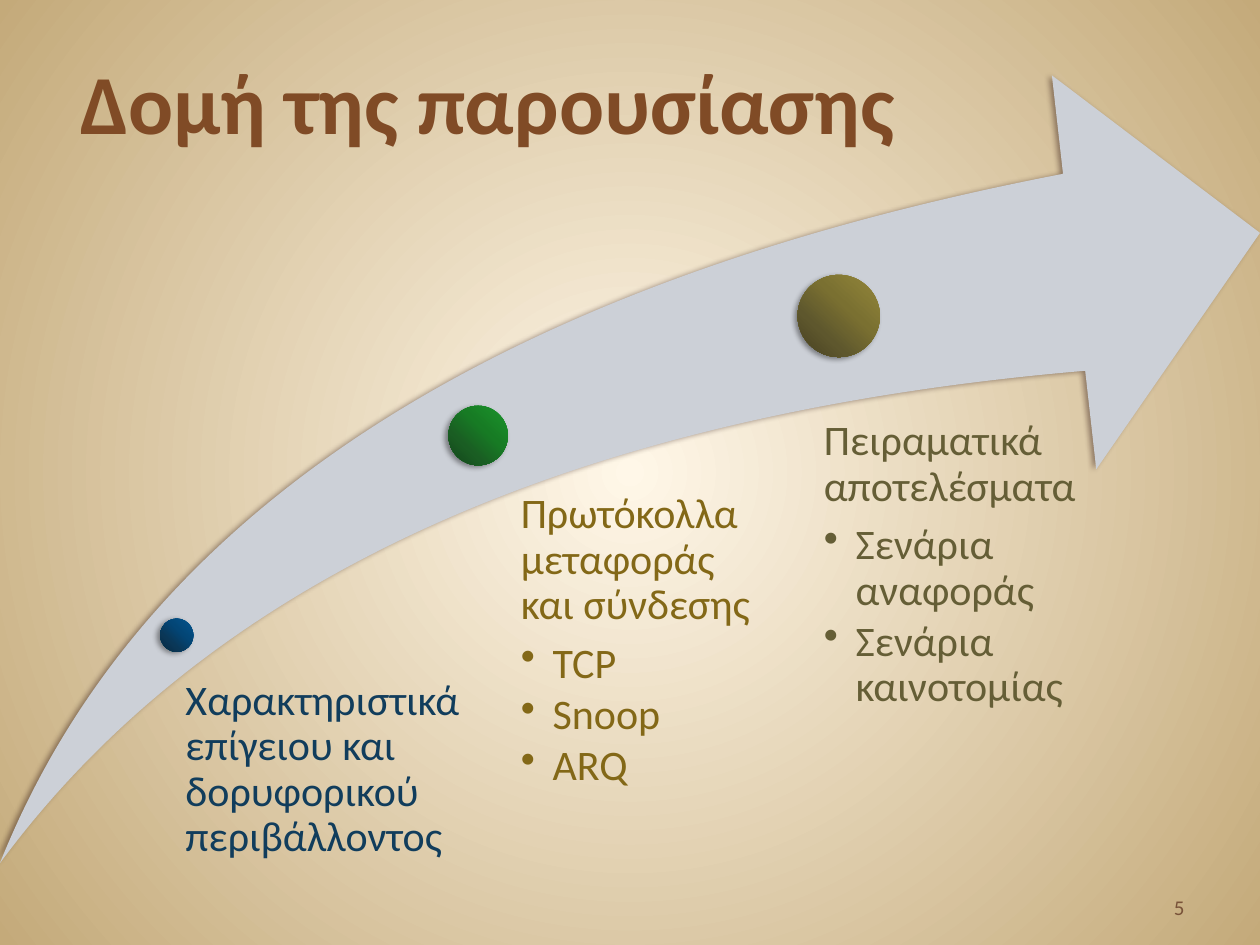
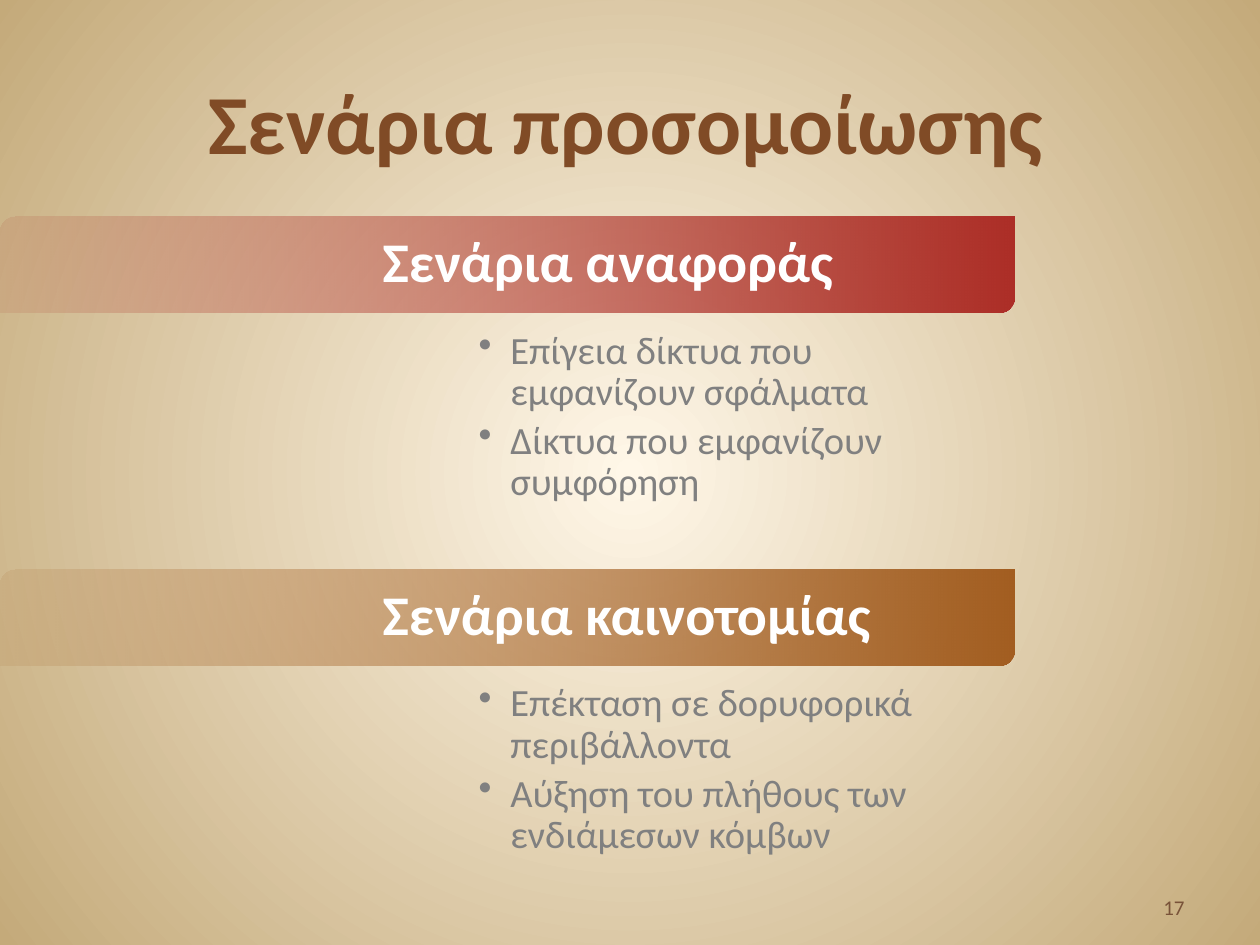
from lxml import etree
from pptx import Presentation
from pptx import util as u
from pptx.dml.color import RGBColor
from pptx.enum import shapes, text
from pptx.oxml.ns import qn

FONT = "Calibri"
CREAM = RGBColor(0xFF, 0xF7, 0xE8)
SAND = RGBColor(0xC4, 0xAA, 0x7A)
BROWN = RGBColor(0x80, 0x4B, 0x26)
NUMBER_BROWN = RGBColor(0x79, 0x53, 0x39)
ARROW_GREY = RGBColor(0xCC, 0xD0, 0xD7)
ARROW_SHADOW = RGBColor(0x1A, 0x00, 0x00)
BLACK = RGBColor(0x00, 0x00, 0x00)
WHITE = RGBColor(0xFF, 0xFF, 0xFF)
GREY = RGBColor(0x80, 0x80, 0x80)
RED = RGBColor(0xAD, 0x2E, 0x27)
OCHRE = RGBColor(0xA3, 0x5E, 0x21)
NAVY_TEXT = RGBColor(0x11, 0x3D, 0x5C)
GOLD_TEXT = RGBColor(0x83, 0x68, 0x17)
OLIVE_TEXT = RGBColor(0x65, 0x5E, 0x36)
BLUE_SHADES = [RGBColor.from_string(c) for c in ("03548E", "034676", "0A3757", "082940")]
GREEN_SHADES = [RGBColor.from_string(c) for c in ("1B952C", "177B24", "1A5D23", "13451A")]
OLIVE_SHADES = [RGBColor.from_string(c) for c in ("94873B", "7A7031", "5E572D", "454021")]
DOT_STOPS = (0, 40, 70, 100)


def set_gradient(fill, owner, stops, angle=None):
    fill.gradient()
    gradient = next(owner.iter(qn("a:gradFill")))
    for child in list(gradient):
        gradient.remove(child)
    stop_list = etree.SubElement(gradient, qn("a:gsLst"))
    for position, color, opacity in stops:
        stop = etree.SubElement(stop_list, qn("a:gs"), pos=str(position * 1000))
        shade = etree.SubElement(stop, qn("a:srgbClr"), val=str(color))
        if opacity < 100:
            etree.SubElement(shade, qn("a:alpha"), val=str(opacity * 1000))
    if angle is None:
        circle = etree.SubElement(gradient, qn("a:path"), path="circle")
        etree.SubElement(circle, qn("a:fillToRect"), l="50000", t="50000", r="50000", b="50000")
    else:
        etree.SubElement(gradient, qn("a:lin"), ang=str(angle * 60000), scaled="0")


def write_text(shape, heading, bullets, size, color, bold=False, align=text.PP_ALIGN.LEFT,
               anchor=text.MSO_ANCHOR.TOP, insets=(0.25, 0.13, 0.25, 0.13),
               spacing=1, heading_gap=0, bullet_gap=0):
    frame = shape.text_frame
    frame.word_wrap = True
    frame.vertical_anchor = anchor
    frame.margin_left, frame.margin_top, frame.margin_right, frame.margin_bottom = map(u.Cm, insets)
    lines = [(line, False) for line in heading] + [(line, True) for line in bullets]
    for index, (line, bulleted) in enumerate(lines):
        paragraph = frame.add_paragraph() if index else frame.paragraphs[0]
        paragraph.alignment = align
        paragraph.line_spacing = float(spacing)
        paragraph.space_after = u.Pt(bullet_gap if bulleted else heading_gap)
        if bulleted:
            paragraph.level = 1
            properties = paragraph._p.get_or_add_pPr()
            properties.set("marL", str(u.Cm(0.64)))
            properties.set("indent", str(u.Cm(-0.64)))
            etree.SubElement(properties, qn("a:buChar"), char="•")
        run = paragraph.add_run()
        run.text = line
        run.font.name = FONT
        run.font.size = u.Pt(size)
        run.font.bold = bold
        run.font.color.rgb = color


deck = Presentation()
deck.slide_width = u.Cm(25.4)
deck.slide_height = u.Cm(19.05)

slides = []
for title, title_left, title_top, number in (
    ("Δομή της παρουσίασης", -1.6, 0, "5"),
    ("Σενάρια προσομοίωσης", 1.19, 0.41, "17"),
):
    slide = deck.slides.add_slide(deck.slide_layouts[6])
    set_gradient(slide.background.fill, slide.element, [(0, CREAM, 100), (100, SAND, 100)])
    title_box = slide.shapes.add_textbox(u.Cm(title_left), u.Cm(title_top), u.Cm(22.86), u.Cm(3.18))
    write_text(title_box, [title], [], 48, BROWN, bold=True,
               align=text.PP_ALIGN.CENTER, anchor=text.MSO_ANCHOR.BOTTOM)
    number_box = slide.shapes.add_textbox(u.Cm(18.21), u.Cm(17.35), u.Cm(5.92), u.Cm(1.32))
    write_text(number_box, [number], [], 12, NUMBER_BROWN,
               align=text.PP_ALIGN.RIGHT, anchor=text.MSO_ANCHOR.BOTTOM)
    slides.append(slide)
structure, scenarios = slides

arrow = structure.shapes.add_shape(
    shapes.MSO_SHAPE.SWOOSH_ARROW, 0, u.Cm(1.52), u.Cm(25.4), u.Cm(15.88))
arrow.adjustments[0] = 0.25
arrow.adjustments[1] = 0.25
arrow.fill.solid()
arrow.fill.fore_color.rgb = ARROW_GREY
raised = [(arrow, ARROW_SHADOW)]

stages = (
    ((3.23, 12.47, 0.67), BLUE_SHADES, (3.38, 13.69, 7.29, 4.6), 0.36, NAVY_TEXT,
     "Χαρακτηριστικά επίγειου και δορυφορικού περιβάλλοντος", ()),
    ((9.04, 8.18, 1.2), GREEN_SHADES, (9.86, 9.93, 5.61, 6.27), 0.64, GOLD_TEXT,
     "Πρωτόκολλα μεταφοράς και σύνδεσης", ("TCP", "Snoop", "ARQ")),
    ((16.08, 5.54, 1.66), OLIVE_SHADES, (15.75, 8.46, 6.1, 7.11), 0.86, OLIVE_TEXT,
     "Πειραματικά αποτελέσματα", ("Σενάρια αναφοράς", "Σενάρια καινοτομίας")),
)
for (left, top, size), shades, stage_area, inset, color, heading, topics in stages:
    dot = structure.shapes.add_shape(
        shapes.MSO_SHAPE.OVAL, u.Cm(left), u.Cm(top), u.Cm(size), u.Cm(size))
    set_gradient(dot.fill, dot.element,
                 [(stop, shade, 100) for stop, shade in zip(DOT_STOPS, shades)], 133)
    raised.append((dot, BLACK))
    stage = structure.shapes.add_textbox(*map(u.Cm, stage_area))
    write_text(stage, [heading], topics, 24, color, insets=(inset, 0, 0, 0),
               spacing=0.9, heading_gap=7.6, bullet_gap=3.4)

for part, shadow_color in raised:
    part.line.fill.background()
    part.shadow.inherit = False
    effects = part.element.spPr.find(qn("a:effectLst"))
    shadow = etree.SubElement(effects, qn("a:outerShdw"), blurRad=str(u.Pt(3.1)), dist=str(u.Pt(2)),
                              dir=str(150 * 60000), algn="tl", rotWithShape="0")
    shade = etree.SubElement(shadow, qn("a:srgbClr"), val=str(shadow_color))
    etree.SubElement(shade, qn("a:alpha"), val="40000")

band_width, band_height = 20.45, 1.93
groups = (
    (RED, "Σενάρια αναφοράς",
     ("Επίγεια δίκτυα που εμφανίζουν σφάλματα", "Δίκτυα που εμφανίζουν συμφόρηση")),
    (OCHRE, "Σενάρια καινοτομίας",
     ("Επέκταση σε δορυφορικά περιβάλλοντα", "Αύξηση του πλήθους των ενδιάμεσων κόμβων")),
)
for index, (color, heading, cases) in enumerate(groups):
    band_top = 4.37 + index * 7.11
    band = scenarios.shapes.add_shape(
        shapes.MSO_SHAPE.ROUND_2_DIAG_RECTANGLE, 0, u.Cm(band_top), u.Cm(band_width), u.Cm(band_height))
    set_gradient(band.fill, band.element, [(0, color, 10), (100, color, 100)], 0)
    band.line.fill.background()
    band.shadow.inherit = False
    write_text(band, [heading], [], 32, WHITE, bold=True, anchor=text.MSO_ANCHOR.MIDDLE,
               insets=(7.62, 0.33, 0.33, 0.33), spacing=0.9, heading_gap=10)
    details = scenarios.shapes.add_textbox(
        0, u.Cm(band_top + band_height), u.Cm(band_width), u.Cm(4.24))
    write_text(details, [], cases, 22, GREY, anchor=text.MSO_ANCHOR.MIDDLE,
               insets=(9.65, 0.51, 0.43, 0.51), spacing=0.9, bullet_gap=4)

deck.save("out.pptx")
